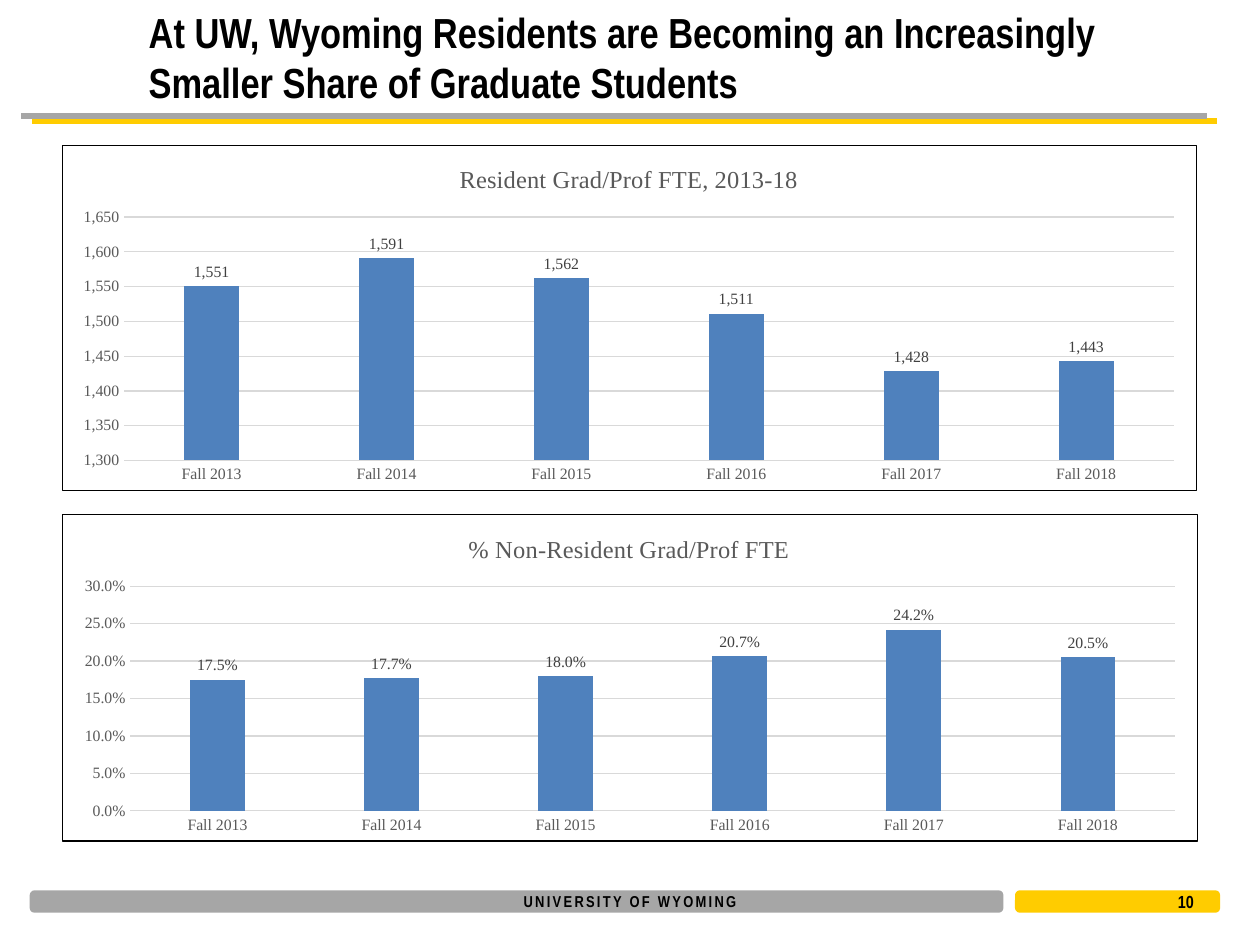
from lxml import etree
from pptx import Presentation
from pptx.chart.data import CategoryChartData
from pptx.dml.color import RGBColor
from pptx.enum import chart as ch, shapes, text
from pptx.oxml import parse_xml
from pptx.oxml.ns import nsdecls, qn
from pptx.util import Inches, Pt

BLACK = RGBColor(0, 0, 0)
WHITE = RGBColor(255, 255, 255)
GRAY = RGBColor(0xA6, 0xA6, 0xA6)
GOLD = RGBColor(0xFF, 0xCC, 0x00)
BLUE = RGBColor(0x4F, 0x81, 0xBD)
PALE = RGBColor(0xD9, 0xD9, 0xD9)
DARK = RGBColor(0x40, 0x40, 0x40)
SLATE = RGBColor(0x59, 0x59, 0x59)


def style(font, name, size, color, bold=False):
    font.name, font.size, font.bold = name, Pt(size), bold
    font.color.rgb = color


def place(node, **parts):
    """Set a manual layout, in shares of the chart, on a title or plot area."""
    for old in node.findall(qn("c:layout")):
        node.remove(old)
    box = etree.Element(qn("c:layout"))
    man = etree.SubElement(box, qn("c:manualLayout"))
    if "w" in parts:
        etree.SubElement(man, qn("c:layoutTarget"), val="inner")
    for key in ("x", "y"):
        etree.SubElement(man, qn(f"c:{key}Mode"), val="edge")
    for key, val in parts.items():
        etree.SubElement(man, qn(f"c:{key}"), val=str(val))
    node.insert(0 if "w" in parts else 1, box)


prs = Presentation()
prs.slide_width, prs.slide_height = Inches(10), Inches(7.5)
slide = prs.slides.add_slide(prs.slide_layouts[5])

# Double rule under the title
for left, top, color in ((0.25, 0.96, GOLD), (0.17, 0.92, GRAY)):
    rule = slide.shapes.add_connector(
        shapes.MSO_CONNECTOR.STRAIGHT, Inches(left), Inches(top),
        Inches(left + 9.41), Inches(top))
    rule.line.color.rgb, rule.line.width = color, Pt(3)
    etree.SubElement(rule._element.spPr, qn("a:effectLst"))

# Footer bars
for left, width, color in ((0.25, 7.7, GRAY), (8.07, 1.6, GOLD)):
    bar = slide.shapes.add_shape(
        shapes.MSO_SHAPE.ROUNDED_RECTANGLE, Inches(left), Inches(7.08),
        Inches(width), Inches(0.15))
    bar.shadow.inherit = False
    bar.fill.solid()
    bar.fill.fore_color.rgb = bar.line.color.rgb = color
    bar.line.width = Pt(2)

# Title
title = slide.shapes.title
title.left, title.top = Inches(1.08), Inches(0.15)
title.width, title.height = Inches(8.75), Inches(0.6)
frame = title.text_frame
frame.text = ("At UW, Wyoming Residents are Becoming an Increasingly "
              "Smaller Share of Graduate Students")
frame.vertical_anchor = text.MSO_ANCHOR.MIDDLE
frame.auto_size = text.MSO_AUTO_SIZE.NONE
frame.paragraphs[0].alignment = text.PP_ALIGN.LEFT
style(frame.paragraphs[0].font, "Arial Narrow", 24, BLACK, True)

# Footer name and page number
for words, left, top, width, height, size, gap, align in (
        ("UNIVERSITY OF WYOMING", 4, 7.03, 2, 0.25, 9, 130,
         text.PP_ALIGN.CENTER),
        ("10", 9.25, 7.06, 0.5, 0.19, 10, 0, text.PP_ALIGN.LEFT)):
    box = slide.shapes.add_textbox(
        Inches(left), Inches(top), Inches(width), Inches(height))
    frame = box.text_frame
    frame.text = words
    frame.word_wrap = True
    frame.margin_left, frame.margin_right = Inches(0.1), 0
    if align == text.PP_ALIGN.CENTER:
        frame.margin_left = 0
    frame.vertical_anchor = text.MSO_ANCHOR.MIDDLE
    para = frame.paragraphs[0]
    para.alignment = align
    style(para.font, "Arial Narrow", size, BLACK, True)
    para.runs[0].font._element.set("spc", str(gap))

# Charts
years = [f"Fall {year}" for year in range(2013, 2019)]
charts = (
    ("Resident Grad/Prof FTE, 2013-18", 1.15, 9.01, 2.75, "#,##0",
     (1551, 1591, 1562, 1511, 1428, 1443), (1300, 1650, 50), 3.12, 0.49),
    ("% Non-Resident Grad/Prof FTE", 4.08, 9.02, 2.6, "0.0%",
     (0.175, 0.177, 0.18, 0.207, 0.242, 0.205), (0, 0.3, 0.05), 3.19, 0.54))
for head, top, width, height, form, vals, scale, start, edge in charts:
    data = CategoryChartData(number_format=form)
    data.categories = years
    data.add_series("Series 1", vals)
    chart = slide.shapes.add_chart(
        ch.XL_CHART_TYPE.COLUMN_CLUSTERED, Inches(0.49), Inches(top),
        Inches(width), Inches(height), data).chart
    style(chart.font, "Times New Roman", 10, BLACK)
    chart.has_legend = False

    # Heading, plot area and frame
    chart.has_title = True
    frame = chart.chart_title.text_frame
    frame.text = head
    style(frame.paragraphs[0].font, "Times New Roman", 14, SLATE)
    chart.chart_title.include_in_layout = False
    place(chart.chart_title._element, x=start / width, y=0.11 / height)
    root = chart._chartSpace
    place(root.find(".//" + qn("c:plotArea")),
          x=edge / width, y=0.57 / height,
          w=(width - edge - 0.18) / width, h=(height - 0.57 - 0.24) / height)
    root.find(qn("c:txPr")).addprevious(parse_xml(
        f'<c:spPr {nsdecls("c", "a")}><a:solidFill><a:srgbClr val="{WHITE}"/>'
        f'</a:solidFill><a:ln w="{Pt(0.75)}"><a:solidFill>'
        f'<a:srgbClr val="{BLACK}"/></a:solidFill></a:ln></c:spPr>'))

    # Axes
    cat, val = chart.category_axis, chart.value_axis
    for axis in (cat, val):
        axis.major_tick_mark = axis.minor_tick_mark = ch.XL_TICK_MARK.NONE
        style(axis.tick_labels.font, "Times New Roman", 9, SLATE)
    val.minimum_scale, val.maximum_scale, val.major_unit = scale
    val.tick_labels.number_format = form
    val.tick_labels.number_format_is_linked = False
    val.format.line.fill.background()
    for line in (cat.format.line, val.major_gridlines.format.line):
        line.color.rgb, line.width = PALE, Pt(0.75)

    # Columns and their labels
    plot = chart.plots[0]
    plot.vary_by_categories = False
    plot.gap_width, plot.overlap = 219, -27
    fill = plot.series[0].format.fill
    fill.solid()
    fill.fore_color.rgb = BLUE
    tags = plot.series[0].data_labels
    tags.show_value = True
    tags.position = ch.XL_LABEL_POSITION.OUTSIDE_END
    tags.number_format, tags.number_format_is_linked = form, False
    style(tags.font, "Times New Roman", 9, DARK)

prs.save("out.pptx")
